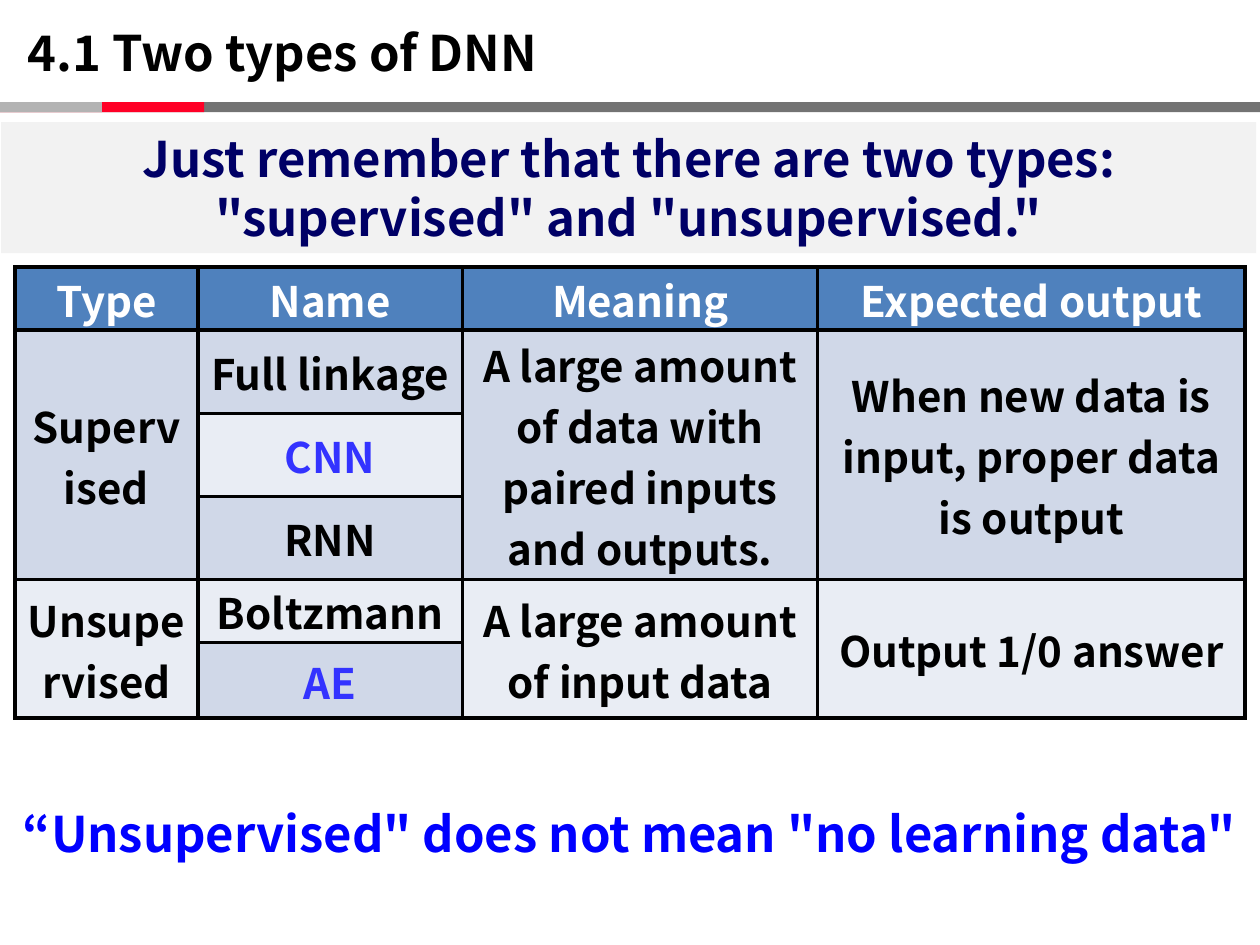
from lxml import etree
from pptx import Presentation
from pptx.dml.color import RGBColor
from pptx.enum.shapes import MSO_SHAPE
from pptx.enum.text import MSO_ANCHOR, MSO_AUTO_SIZE, PP_ALIGN
from pptx.oxml.ns import qn
from pptx.util import Inches, Pt

COLORS = {
    "black": "000000", "white": "FFFFFF", "navy": "000066", "blue": "0000FF",
    "highlight": "3333FF", "header": "4F81BD", "band": "D0D8E8", "light": "E9EDF4",
    "panel": "F2F2F2", "rule": "737373", "red": "FF0026", "gray": "B3B3B3",
}


def write_text(frame, text, size, color, align=PP_ALIGN.CENTER, spacing=None):
    frame.text = text
    paragraph = frame.paragraphs[0]
    paragraph.alignment = align
    paragraph.line_spacing = spacing
    font = paragraph.runs[0].font
    values = {"name": "Noto Sans CJK JP", "size": Pt(size), "bold": True}
    for name, value in values.items():
        setattr(font, name, value)
    font.color.rgb = RGBColor.from_string(COLORS[color])


def add_bar(left, top, width, height, color):
    shape = slide.shapes.add_shape(
        MSO_SHAPE.RECTANGLE, Inches(left), Inches(top), Inches(width), Inches(height))
    shape.shadow.inherit = False
    shape.fill.solid()
    shape.fill.fore_color.rgb = RGBColor.from_string(COLORS[color])
    shape.line.fill.background()
    return shape


presentation = Presentation()
presentation.slide_width = Inches(10)
presentation.slide_height = Inches(7.5)
slide = presentation.slides.add_slide(presentation.slide_layouts[5])

for width, color in [(10, "rule"), (1.62, "red"), (0.81, "gray")]:
    add_bar(0, 0.81, width, 0.08, color)

title = slide.shapes.title
title_box = {"left": 0.12, "top": 0.13, "width": 4.7, "height": 0.57}
for name, value in title_box.items():
    setattr(title, name, Inches(value))
title.text_frame.word_wrap = False
title.text_frame.auto_size = MSO_AUTO_SIZE.NONE
title.text_frame.vertical_anchor = MSO_ANCHOR.MIDDLE
heading_spacing = Pt(33.6)
write_text(title.text_frame, "4.1 Two types of DNN", 28, "black",
           PP_ALIGN.LEFT, heading_spacing)

message = add_bar(0.01, 0.97, 9.96, 1.04, "panel")
conclusion = slide.shapes.add_textbox(Inches(0.03), Inches(6.33), Inches(9.93), Inches(1.04))
statements = [
    (message, 'Just remember that there are two types: "supervised" and "unsupervised."', "navy"),
    (conclusion, '“Unsupervised" does not mean "no learning data"', "blue"),
]
for shape, text, color in statements:
    shape.text_frame.word_wrap = True
    shape.text_frame.vertical_anchor = MSO_ANCHOR.TOP
    write_text(shape.text_frame, text, 28, color, spacing=heading_spacing)

column_widths = [1.45, 2.1, 2.82, 3.39]
row_heights = [0.5, 0.66, 0.66, 0.66, 0.5, 0.6]
table = slide.shapes.add_table(
    len(row_heights), len(column_widths), Inches(0.12), Inches(2.12),
    Inches(sum(column_widths)), Inches(sum(row_heights))).table
for column, width in zip(table.columns, column_widths):
    column.width = Inches(width)
for row, height in zip(table.rows, row_heights):
    row.height = Inches(height)

rows = [
    ("header", ["Type", "Name", "Meaning", "Expected output"]),
    ("band", ["Supervised", "Full linkage",
              "A large amount of data with paired inputs and outputs.",
              "When new data is input, proper data is output"]),
    ("light", ["", "CNN", "", ""]),
    ("band", ["", "RNN", "", ""]),
    ("light", ["Unsupervised", "Boltzmann", "A large amount of input data",
               "Output 1/0 answer"]),
    ("band", ["", "AE", "", ""]),
]
cell_format = {
    "margin_top": Inches(0.01), "margin_bottom": 0, "vertical_anchor": MSO_ANCHOR.MIDDLE,
}
for row_index, (fill, texts) in enumerate(rows):
    for column_index, text in enumerate(texts):
        cell = table.cell(row_index, column_index)
        for name, value in cell_format.items():
            setattr(cell, name, value)
        properties = cell._tc.get_or_add_tcPr()
        for side in ("a:lnL", "a:lnR", "a:lnT", "a:lnB"):
            border = etree.SubElement(properties, qn(side), w=str(Pt(2.25)))
            border_fill = etree.SubElement(border, qn("a:solidFill"))
            etree.SubElement(border_fill, qn("a:srgbClr"), val=COLORS["black"])
        cell.fill.solid()
        cell.fill.fore_color.rgb = RGBColor.from_string(COLORS[fill])
        if text:
            color = "white" if fill == "header" else "black"
            if text in ("CNN", "AE"):
                color = "highlight"
            write_text(cell.text_frame, text, 24, color)

for column_index in (0, 2, 3):
    for first, last in [(1, 3), (4, 5)]:
        table.cell(first, column_index).merge(table.cell(last, column_index))

presentation.save("out.pptx")
